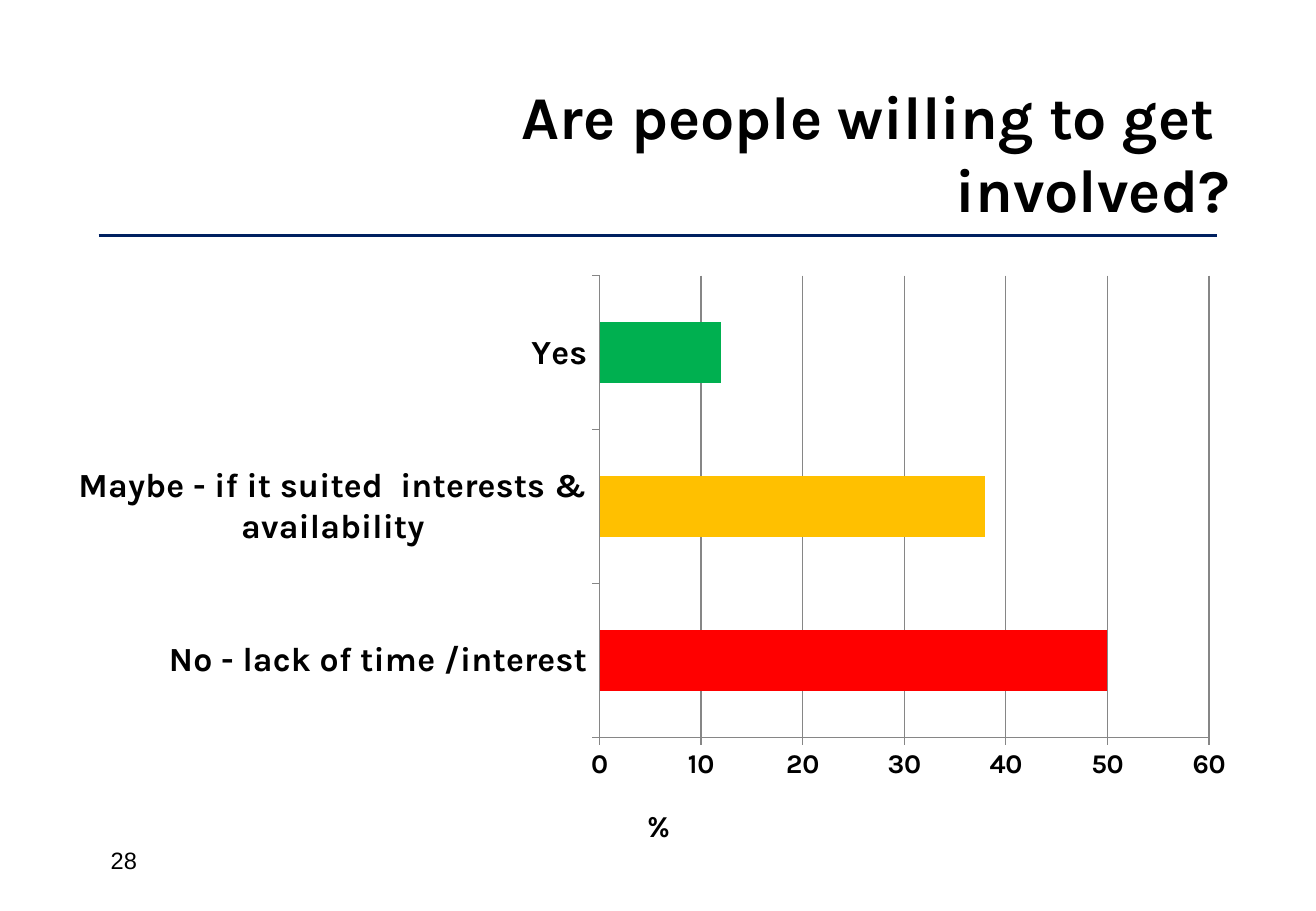
from lxml import etree
from pptx import Presentation
from pptx.chart.data import CategoryChartData
from pptx.dml.color import RGBColor
from pptx.enum.chart import XL_CHART_TYPE, XL_TICK_MARK
from pptx.enum.shapes import MSO_CONNECTOR
from pptx.enum.text import MSO_ANCHOR, PP_ALIGN
from pptx.oxml.ns import qn
from pptx.util import Pt

BAR = XL_CHART_TYPE.BAR_CLUSTERED
OUT, NONE = XL_TICK_MARK.OUTSIDE, XL_TICK_MARK.NONE
STRAIGHT = MSO_CONNECTOR.STRAIGHT
TOP, MIDDLE = MSO_ANCHOR.TOP, MSO_ANCHOR.MIDDLE
LEFT, RIGHT = PP_ALIGN.LEFT, PP_ALIGN.RIGHT

BLACK = RGBColor(0x00, 0x00, 0x00)
NAVY = RGBColor(0x00, 0x20, 0x60)
GREY = RGBColor(0x86, 0x86, 0x86)
TEAL = RGBColor(0x00, 0xCC, 0x99)
RED = RGBColor(0xFF, 0x00, 0x00)
AMBER = RGBColor(0xFF, 0xC0, 0x00)
GREEN = RGBColor(0x00, 0xB0, 0x50)

ANSWERS = [
    ("No - lack of time /interest", 50, RED),
    ("Maybe - if it suited  interests & availability", 38, AMBER),
    ("Yes", 12, GREEN),
]


def style(font, size, bold=False, face="Karla", color=BLACK):
    font.name = face
    font.size = Pt(size)
    font.bold = bold
    font.color.rgb = color


def write(frame, text, align=None, **form):
    """Fill the first paragraph; a newline becomes a line break."""
    para = frame.paragraphs[0]
    para.alignment = align
    for i, line in enumerate(text.split("\n")):
        if i:
            para.add_line_break()
        run = para.add_run()
        run.text = line
        style(run.font, **form)


def place(parent, index, **shares):
    """Fix a chart part at shares of the chart's width and height."""
    layout = parent.find(qn("c:layout"))
    if layout is None:
        layout = etree.Element(qn("c:layout"))
        parent.insert(index, layout)
    manual = etree.SubElement(layout, qn("c:manualLayout"))
    if "w" in shares:
        etree.SubElement(manual, qn("c:layoutTarget")).set("val", "inner")
    for side in "xy":
        etree.SubElement(manual, qn(f"c:{side}Mode")).set("val", "edge")
    for name, share in shares.items():
        etree.SubElement(manual, qn(f"c:{name}")).set("val", str(share))


class Deck:
    def __init__(self, width, height):
        self.show = Presentation()
        self.show.slide_width, self.show.slide_height = Pt(width), Pt(height)
        self.slide = self.show.slides.add_slide(self.show.slide_layouts[6])

    def text(self, text, box, anchor=TOP, **form):
        frame = self.slide.shapes.add_textbox(*map(Pt, box)).text_frame
        frame.word_wrap = True
        frame.vertical_anchor = anchor
        write(frame, text, **form)

    def rule(self, left, right, y):
        line = self.slide.shapes.add_connector(
            STRAIGHT, Pt(left), Pt(y), Pt(right), Pt(y))
        line.line.color.rgb = NAVY
        line.line.width = Pt(2)
        etree.SubElement(line._element.spPr, qn("a:effectLst"))

    def bars(self, answers, box):
        names, values, colors = zip(*answers)
        data = CategoryChartData(number_format="0")
        data.categories = names
        data.add_series("Series 1", values)
        chart = self.slide.shapes.add_chart(BAR, *map(Pt, box), data).chart
        chart.has_legend = chart.has_title = False
        style(chart.font, 10)

        plot = chart.plots[0]
        plot.gap_width = 150
        plot.vary_by_categories = False
        series = plot.series[0]
        series.format.fill.solid()
        series.format.fill.fore_color.rgb = TEAL
        for i, color in enumerate(colors):
            fill = series.points[i].format.fill
            fill.solid()
            fill.fore_color.rgb = color

        cat, val = chart.category_axis, chart.value_axis
        for axis, size in ((cat, 20), (val, 16)):
            axis.major_tick_mark, axis.minor_tick_mark = OUT, NONE
            axis.format.line.color.rgb = GREY
            axis.format.line.width = Pt(0.75)
            style(axis.tick_labels.font, size, bold=True)
        val.minimum_scale, val.maximum_scale, val.major_unit = 0, 60, 10
        val.tick_labels.number_format = "0"
        val.tick_labels.number_format_is_linked = False
        val.has_major_gridlines = True
        val.major_gridlines.format.line.color.rgb = GREY
        val.major_gridlines.format.line.width = Pt(0.75)
        write(val.axis_title.text_frame, "%", size=18, bold=True)

        place(plot._element.getparent(), 0, x=0.455, y=0.018, w=0.51, h=0.767)
        place(val.axis_title._element, 1, x=0.49, y=0.89)


def main():
    deck = Deck(780, 540)
    deck.rule(58.5, 721.5, 139.5)
    deck.text("Are people willing to get \ninvolved?", (58.5, 42, 677.5, 95.5),
              anchor=MIDDLE, align=RIGHT, size=36, bold=True)
    deck.text("28", (58.5, 498, 65, 24), align=LEFT, size=14, face="Arial")
    deck.bars(ANSWERS, (33, 157, 708.5, 357))
    deck.show.save("out.pptx")


if __name__ == "__main__":
    main()
